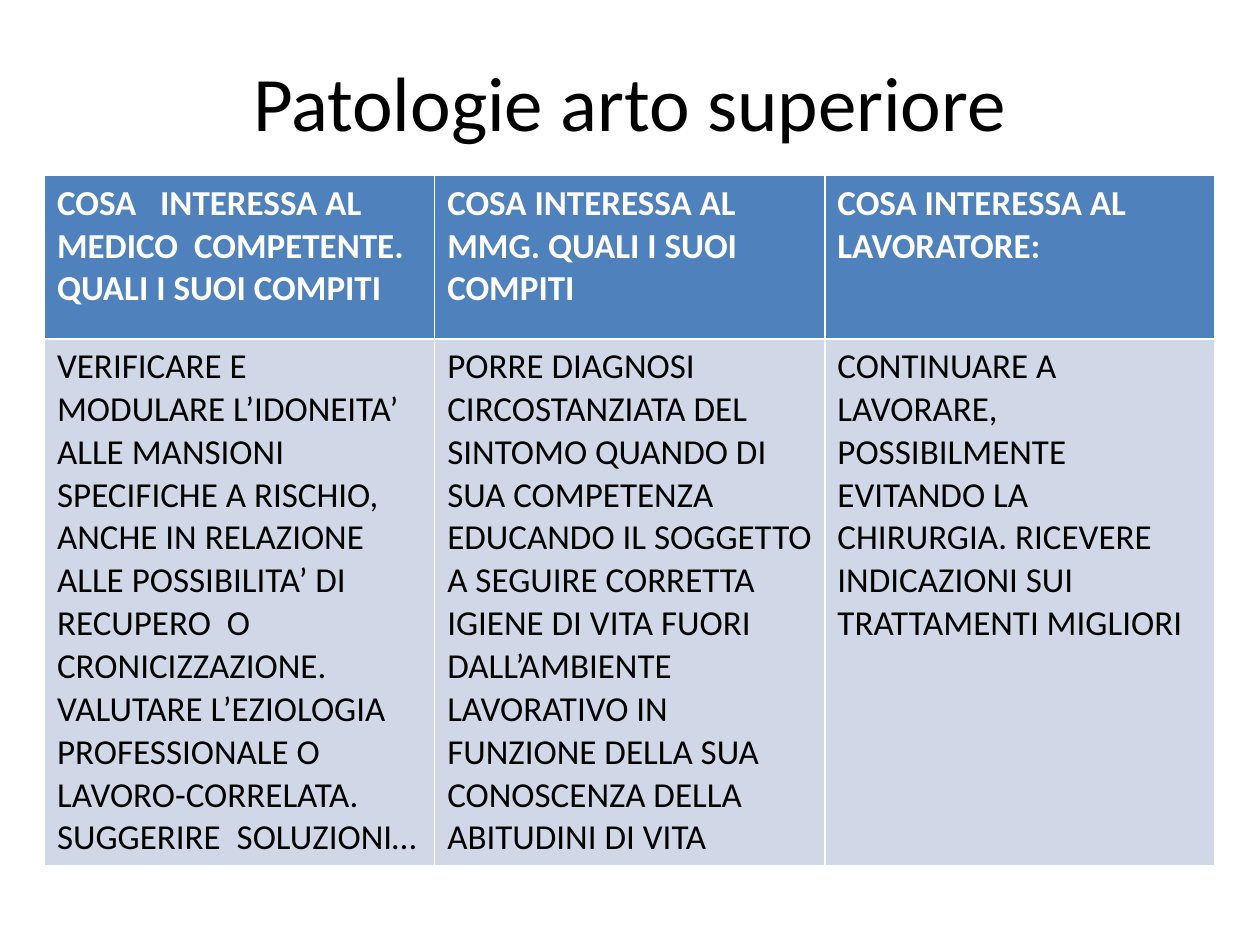
from pptx import Presentation
from pptx.dml.color import RGBColor
from pptx.enum import text
from pptx.util import Pt


def style_runs(frame, size, color, bold=False):
    for paragraph in frame.paragraphs:
        for run in paragraph.runs:
            run.font.name = "Calibri"
            run.font.size = Pt(size)
            run.font.bold = bold
            run.font.color.rgb = RGBColor.from_string(color)


prs = Presentation()
prs.slide_width, prs.slide_height = Pt(720), Pt(540)
slide = prs.slides.add_slide(prs.slide_layouts[5])

# Title
heading = slide.shapes.title
heading.left, heading.top, heading.width, heading.height = Pt(36.7), Pt(21), Pt(646.6), Pt(73.4)
heading.text_frame.text = "Patologie arto superiore"
heading.text_frame.vertical_anchor = text.MSO_ANCHOR.MIDDLE
heading.text_frame.paragraphs[0].alignment = text.PP_ALIGN.CENTER
style_runs(heading.text_frame, 44, "000000")

# Table content: one question per column, with its answer below
questions = [
    "COSA   INTERESSA AL MEDICO  COMPETENTE. QUALI I SUOI COMPITI",
    "COSA INTERESSA AL MMG. QUALI I SUOI COMPITI",
    "COSA INTERESSA AL LAVORATORE:",
]
answers = [
    "VERIFICARE E MODULARE L’IDONEITA’ ALLE MANSIONI SPECIFICHE A RISCHIO, "
    "ANCHE IN RELAZIONE ALLE POSSIBILITA’ DI RECUPERO  O CRONICIZZAZIONE. "
    "VALUTARE L’EZIOLOGIA PROFESSIONALE O LAVORO-CORRELATA. "
    "SUGGERIRE  SOLUZIONI…",
    "PORRE DIAGNOSI CIRCOSTANZIATA DEL SINTOMO QUANDO DI SUA COMPETENZA "
    "EDUCANDO IL SOGGETTO A SEGUIRE CORRETTA IGIENE DI VITA FUORI "
    "DALL’AMBIENTE LAVORATIVO IN FUNZIONE DELLA SUA CONOSCENZA DELLA "
    "ABITUDINI DI VITA",
    "CONTINUARE A LAVORARE, POSSIBILMENTE EVITANDO LA CHIRURGIA. "
    "RICEVERE INDICAZIONI SUI TRATTAMENTI MIGLIORI",
]
# Texts, row height, fill, font colour, bold
row_styles = [
    (questions, 93.3, "4F81BD", "FFFFFF", True),
    (answers, 298, "D0D8E8", "000000", False),
]

# Table: the default style supplies the white borders
duties = slide.shapes.add_table(2, 3, Pt(25.4), Pt(100.3), Pt(669), Pt(391.3)).table
for column in duties.columns:
    column.width = Pt(223)
for row, (entries, height, fill, color, bold) in zip(duties.rows, row_styles):
    row.height = Pt(height)
    for cell, entry in zip(row.cells, entries):
        cell.text_frame.text = entry
        cell.fill.solid()
        cell.fill.fore_color.rgb = RGBColor.from_string(fill)
        style_runs(cell.text_frame, 20, color, bold)

prs.save("out.pptx")
